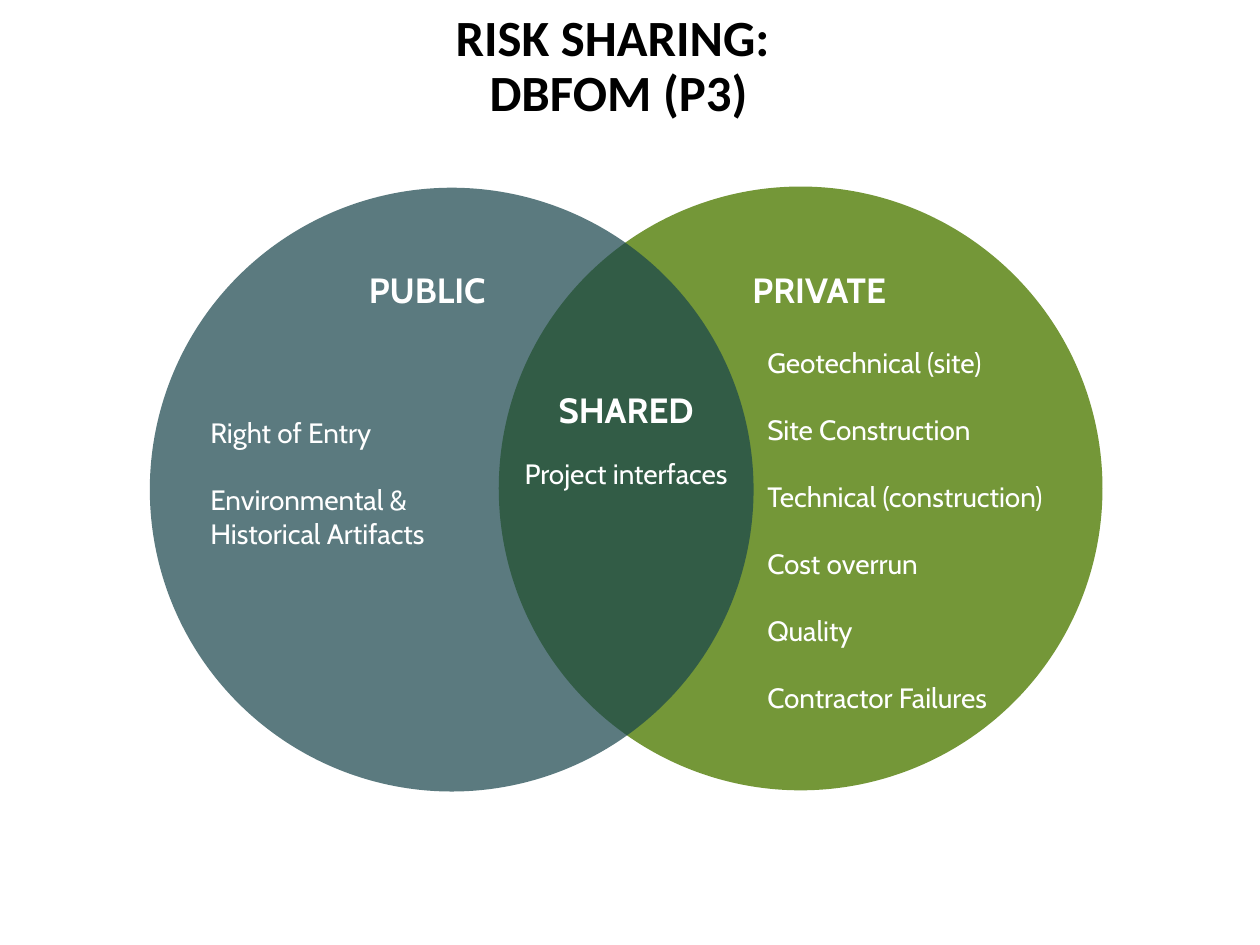
from lxml.etree import SubElement
from pptx import Presentation
from pptx.dml.color import RGBColor
from pptx.enum.shapes import MSO_SHAPE
from pptx.enum.text import MSO_ANCHOR, PP_ALIGN
from pptx.oxml.ns import qn
from pptx.util import Pt

WHITE = "FFFFFF"
CIRCLE_SIZE = 345
HEADING_WIDTH = 131


def color(hex_string):
    return RGBColor.from_string(hex_string)


def add_text(slide, left, top, width, height, paragraphs, *, size=16, font="Cabin",
             fill=WHITE, bold=False, align=PP_ALIGN.LEFT, anchor=MSO_ANCHOR.TOP,
             line_spacing=1.0, gap=0):
    """Add a text box; gap is the space in points between paragraphs."""
    box = slide.shapes.add_textbox(Pt(left), Pt(top), Pt(width), Pt(height))
    frame = box.text_frame
    frame.word_wrap = True
    frame.vertical_anchor = anchor
    for index, text in enumerate(paragraphs):
        paragraph = frame.add_paragraph() if index else frame.paragraphs[0]
        paragraph.alignment = align
        paragraph.line_spacing = line_spacing
        if index and gap:
            paragraph.space_before = Pt(gap)
        paragraph.text = text
        for run in paragraph.runs:
            run.font.name = font
            run.font.size = Pt(size)
            run.font.bold = bold
            run.font.color.rgb = color(fill)


def add_circle(slide, left, top, fill, opacity):
    """Add a borderless circle; opacity is in percent."""
    circle = slide.shapes.add_shape(MSO_SHAPE.OVAL, Pt(left), Pt(top),
                                    Pt(CIRCLE_SIZE), Pt(CIRCLE_SIZE))
    circle.shadow.inherit = False
    circle.line.fill.background()
    circle.fill.solid()
    circle.fill.fore_color.rgb = color(fill)
    fill_color = circle.fill._xPr.find(qn("a:solidFill"))[0]
    SubElement(fill_color, qn("a:alpha"), val=str(opacity * 1000))


def add_title(slide, left, top, width, height):
    add_text(slide, left, top, width, height, ["RISK SHARING: \vDBFOM (P3)"],
             size=29, font="Calibri", fill="000000", bold=True,
             align=PP_ALIGN.CENTER, anchor=MSO_ANCHOR.MIDDLE, line_spacing=0.9)


def add_heading(slide, left, top, text):
    add_text(slide, left, top, HEADING_WIDTH, 31.7, [text], size=20, bold=True,
             align=PP_ALIGN.CENTER)


def add_risk_list(slide, left, top, width, height, risks):
    add_text(slide, left, top, width, height, risks, gap=19.2)


def add_venn_diagram(slide, left, top, width):
    """Draw both circles across the width, with the risks of each party."""
    add_circle(slide, left + width - CIRCLE_SIZE, top, "598210", 83)
    add_circle(slide, left, top + 0.7, "18454C", 71)

    add_heading(slide, left + 93, top + 43.2, "PUBLIC")
    add_risk_list(slide, left + 27.5, top + 127.4, 167, 85,
                  ["Right of Entry", "Environmental & Historical Artifacts"])

    add_heading(slide, left + 317, top + 43.2, "PRIVATE")
    add_risk_list(slide, left + 345.8, top + 87.1, 188, 220,
                  ["Geotechnical (site)", "Site Construction",
                   "Technical (construction)", "Cost overrun", "Quality",
                   "Contractor Failures"])

    shared_left = left + (width - HEADING_WIDTH) / 2
    add_heading(slide, shared_left, top + 111.6, "SHARED")
    add_text(slide, shared_left, top + 150.5, HEADING_WIDTH, 46,
             ["Project interfaces"], align=PP_ALIGN.CENTER)


def main():
    presentation = Presentation()
    presentation.slide_width = Pt(720)
    presentation.slide_height = Pt(540)
    slide = presentation.slides.add_slide(presentation.slide_layouts[6])
    add_venn_diagram(slide, 85.6, 106.6, 544.4)
    add_title(slide, 162, 17.3, 383, 42.5)
    presentation.save("out.pptx")


if __name__ == "__main__":
    main()
